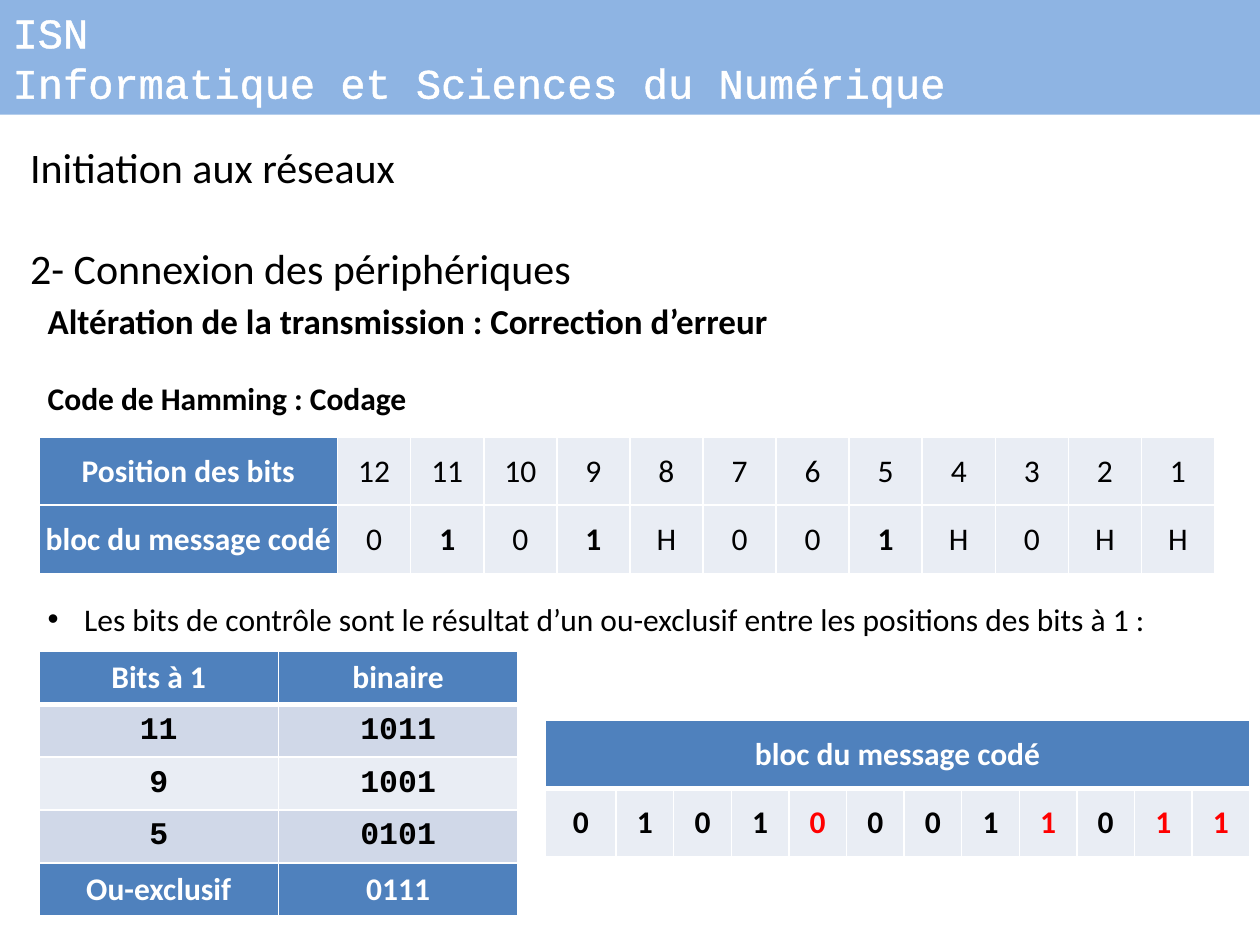
import pptx
import pptx.dml.color
import pptx.enum.text
import pptx.oxml
import pptx.oxml.ns
import pptx.util
from pptx.util import Inches

BLACK, WHITE, RED = "000000", "FFFFFF", "FF0000"
BANNER, HEADER, BAND, LIGHT = "8EB4E3", "4F81BD", "D0D8E8", "E9EDF4"
CENTER = pptx.enum.text.PP_ALIGN.CENTER
LEFT = pptx.enum.text.PP_ALIGN.LEFT


def rgb(value):
    return pptx.dml.color.RGBColor.from_string(value)


def line_xml(tag, color, width):
    """Build a solid line element, used for cell borders and text outlines."""
    return pptx.oxml.parse_xml(
        f'<a:{tag} {pptx.oxml.ns.nsdecls("a")} w="{int(pptx.util.Pt(width))}">'
        f'<a:solidFill><a:srgbClr val="{color}"/></a:solidFill></a:{tag}>')


def write(p, text, size=18, font="Calibri", color=BLACK, bold=False,
          align=LEFT, before=0, outline=None):
    p.alignment = align
    p.space_before = pptx.util.Pt(before)
    r = p.add_run()
    r.text = text
    r.font.size = pptx.util.Pt(size)
    r.font.name = font
    r.font.bold = bold
    r.font.color.rgb = rgb(color)
    if outline:
        r.font._element.insert(0, line_xml("ln", color, outline))


def add_bullet(p, indent):
    pPr = p._p.get_or_add_pPr()
    pPr.set("marL", str(int(indent)))
    pPr.set("indent", str(-int(indent)))
    ns = pptx.oxml.ns.nsdecls("a")
    pPr.append(pptx.oxml.parse_xml(f'<a:buFont {ns} typeface="Arial"/>'))
    pPr.append(pptx.oxml.parse_xml(f'<a:buChar {ns} char="•"/>'))


class SlideBuilder:
    def __init__(self, prs):
        self.s = prs.slides.add_slide(prs.slide_layouts[5])

    def title(self, lines, left, top, width, height):
        sp = self.s.shapes.title
        sp.left, sp.top = Inches(left), Inches(top)
        sp.width, sp.height = Inches(width), Inches(height)
        sp.fill.solid()
        sp.fill.fore_color.rgb = rgb(BANNER)
        tf = sp.text_frame
        tf.auto_size = pptx.enum.text.MSO_AUTO_SIZE.NONE
        tf.vertical_anchor = pptx.enum.text.MSO_ANCHOR.TOP
        for i, text in enumerate(lines):
            p = tf.add_paragraph() if i else tf.paragraphs[0]
            write(p, text, size=24, font="Courier New", color=WHITE, outline=1.45)

    def text(self, paragraphs, left, top, width, height, wrap=True):
        """Each paragraph is (text, format, bullet indent in inches or None)."""
        sp = self.s.shapes.add_textbox(
            Inches(left), Inches(top), Inches(width), Inches(height))
        tf = sp.text_frame
        tf.word_wrap = wrap
        for i, (text, style, indent) in enumerate(paragraphs):
            p = tf.add_paragraph() if i else tf.paragraphs[0]
            if indent:
                add_bullet(p, Inches(indent))
            write(p, text, **style)

    def table(self, rows, left, top, col_widths, row_height, tight=True,
              thick_header=False):
        """Each cell is (text, fill, format); None is covered by a merge."""
        frame = self.s.shapes.add_table(
            len(rows), len(col_widths), Inches(left), Inches(top),
            Inches(sum(col_widths)), Inches(row_height * len(rows)))
        table = frame.table
        table.horz_banding = False
        for col, width in zip(table.columns, col_widths):
            col.width = Inches(width)
        for y, row in enumerate(rows):
            table.rows[y].height = Inches(row_height)
            if None in row:
                table.cell(y, 0).merge(table.cell(y, len(row) - 1))
            for x, content in enumerate(row):
                cell = table.cell(y, x)
                # The rule under a header row is shared with the row below
                self.borders(cell,
                             top=3 if thick_header and y == 1 else 1,
                             bottom=3 if thick_header and y == 0 else 1)
                if content:
                    self.cell(cell, content, tight)

    def borders(self, cell, top, bottom):
        tcPr = cell._tc.get_or_add_tcPr()
        for tag, width in (("lnL", 1), ("lnR", 1), ("lnT", top), ("lnB", bottom)):
            tcPr.append(line_xml(tag, WHITE, width))

    def cell(self, cell, content, tight):
        text, fill, style = content
        cell.fill.solid()
        cell.fill.fore_color.rgb = rgb(fill)
        cell.vertical_anchor = pptx.enum.text.MSO_ANCHOR.MIDDLE
        if tight:
            cell.margin_left = cell.margin_right = 0
            cell.margin_top = cell.margin_bottom = 0
        write(cell.text_frame.paragraphs[0], text, align=CENTER, **style)


def header(text):
    return text, HEADER, dict(color=WHITE, bold=True)


def main():
    prs = pptx.Presentation()
    prs.slide_width, prs.slide_height = Inches(10), Inches(7.5)
    b = SlideBuilder(prs)

    # Banner and headings
    b.title(["ISN", "Informatique et Sciences du Numérique"], 0, 0, 10, 0.91)
    b.text([("Initiation aux réseaux", dict(size=24), None),
            ("2- Connexion des périphériques", dict(size=24, before=29), None)],
           0.14, 1.07, 4.61, 1.31, wrap=False)
    b.text([("Altération de la transmission : Correction d’erreur",
             dict(size=20, bold=True), None)], 0.28, 2.33, 9.37, 0.44)

    # Hamming code: the bullet sits below the table of positions
    b.text([("Code de Hamming : Codage", dict(bold=True), None),
            ("Les bits de contrôle sont le résultat d’un ou-exclusif entre "
             "les positions des bits à 1 :", dict(before=104.5), 0.29)],
           0.28, 2.96, 9.72, 3.32)

    # Bit positions and block with unknown control bits
    positions = [(str(n), LIGHT, {}) for n in range(12, 0, -1)]
    bits = [(bit, LIGHT, dict(bold=bit == "1")) for bit in "0101H001H0HH"]
    b.table([[header("Position des bits")] + positions,
             [header("bloc du message codé")] + bits],
            0.31, 3.47, [2.37] + [0.58] * 12, 0.54)

    # Exclusive or of the positions holding a 1
    mono = dict(font="Courier New", bold=True)
    values = [[(str(n), fill, mono), (f"{n:04b}", fill, mono)]
              for n, fill in ((11, BAND), (9, LIGHT), (5, BAND))]
    b.table([[header("Bits à 1"), header("binaire")]] + values
            + [[header("Ou-exclusif"), header(f"{11 ^ 9 ^ 5:04b}")]],
            0.31, 5.17, [1.9, 1.9], 0.42, tight=False, thick_header=True)

    # Coded block, control bits in red at positions 8, 4, 2 and 1
    coded = [(bit, LIGHT, dict(bold=True, color=RED if 12 - i in (8, 4, 2, 1) else BLACK))
             for i, bit in enumerate("010100011011")]
    b.table([[header("bloc du message codé")] + [None] * 11, coded],
            4.33, 5.72, [0.56] + [(5.59 - 0.56) / 11] * 11, 0.54,
            thick_header=True)

    prs.save("out.pptx")


if __name__ == "__main__":
    main()
